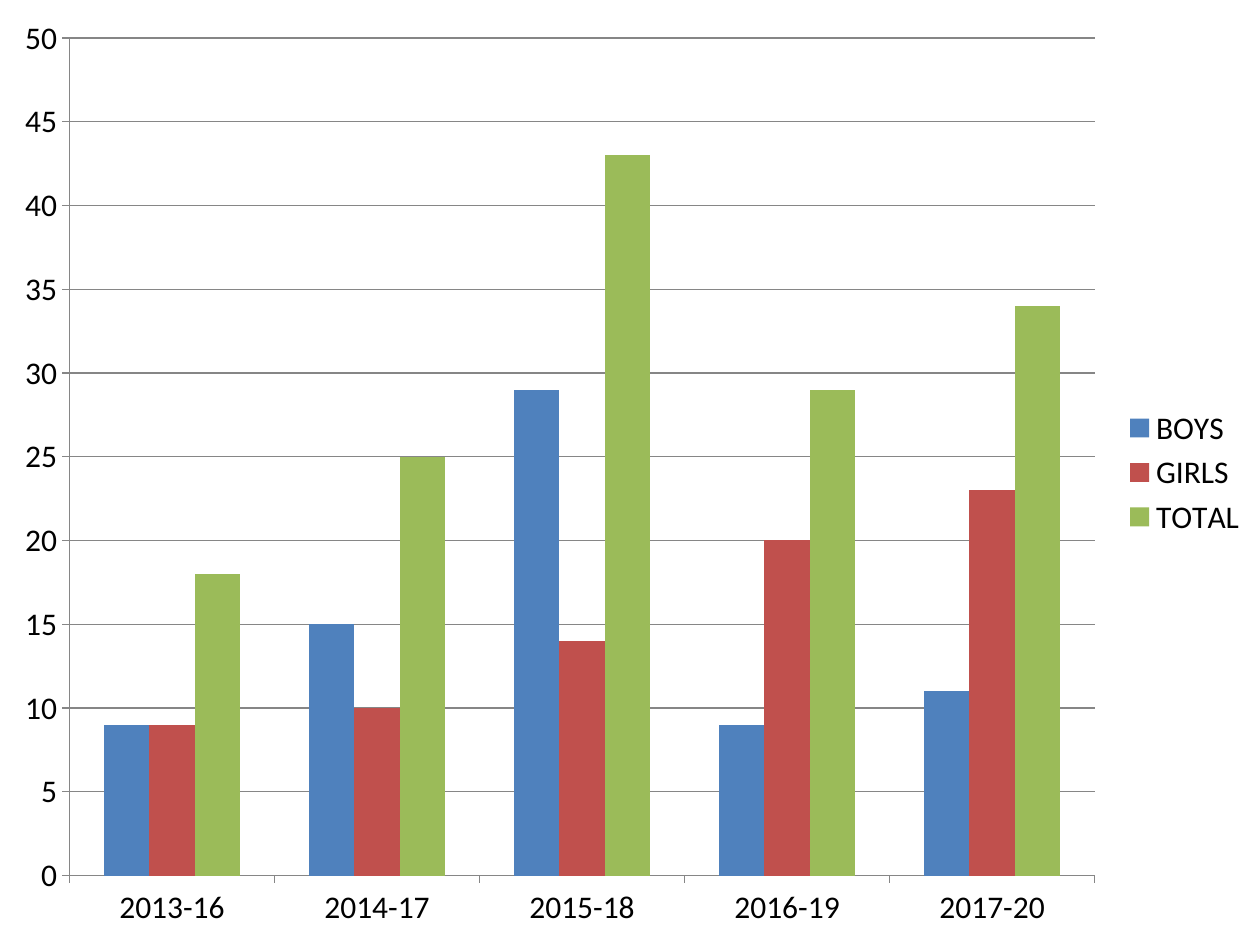
from pptx import Presentation
from pptx.chart.data import CategoryChartData
from pptx.dml.color import RGBColor
from pptx.enum.chart import XL_CHART_TYPE as ChartType, XL_LEGEND_POSITION as LegendPosition
from pptx.enum.chart import XL_TICK_MARK as TickMark
from pptx.util import Cm, Pt

BATCHES = ["2013-16", "2014-17", "2015-18", "2016-19", "2017-20"]
ENROLMENT = [
    ("BOYS", "4F81BD", [9, 15, 29, 9, 11]),
    ("GIRLS", "C0504D", [9, 10, 14, 20, 23]),
    ("TOTAL", "9BBB59", [18, 25, 43, 29, 34]),
]
LINE_GREY = "868686"


def color(hex_code):
    return RGBColor.from_string(hex_code)


def style_line(line, hex_code, width=0.75):
    line.color.rgb = color(hex_code)
    line.width = Pt(width)


def style_axis(axis, gridlines):
    axis.major_tick_mark = TickMark.OUTSIDE
    axis.minor_tick_mark = TickMark.NONE
    axis.has_major_gridlines = gridlines
    style_line(axis.format.line, LINE_GREY)
    if gridlines:
        style_line(axis.major_gridlines.format.line, LINE_GREY)


def add_column_chart(slide, categories, series_rows, left, top, width, height):
    chart_data = CategoryChartData()
    chart_data.categories = categories
    for name, _, values in series_rows:
        chart_data.add_series(name, values)
    chart = slide.shapes.add_chart(
        ChartType.COLUMN_CLUSTERED, left, top, width, height, chart_data
    ).chart

    chart.has_title = False
    chart.font.name = "Calibri"
    chart.font.size = Pt(18)
    chart.font.color.rgb = color("000000")

    columns = chart.plots[0]
    columns.vary_by_categories = False
    columns.gap_width = 150
    columns.overlap = 0
    for series, (_, fill, _) in zip(columns.series, series_rows):
        series.format.fill.solid()
        series.format.fill.fore_color.rgb = color(fill)
        series.invert_if_negative = False

    style_axis(chart.category_axis, gridlines=False)
    style_axis(chart.value_axis, gridlines=True)
    chart.value_axis.minimum_scale = 0
    chart.value_axis.maximum_scale = 50
    chart.value_axis.major_unit = 5

    chart.has_legend = True
    chart.legend.position = LegendPosition.RIGHT
    chart.legend.include_in_layout = False


def main():
    deck = Presentation()
    deck.slide_width, deck.slide_height = Cm(25.4), Cm(19.05)
    slide = deck.slides.add_slide(deck.slide_layouts[6])
    add_column_chart(slide, BATCHES, ENROLMENT,
                     Cm(0), Cm(0), deck.slide_width, deck.slide_height)
    deck.save("out.pptx")


if __name__ == "__main__":
    main()
